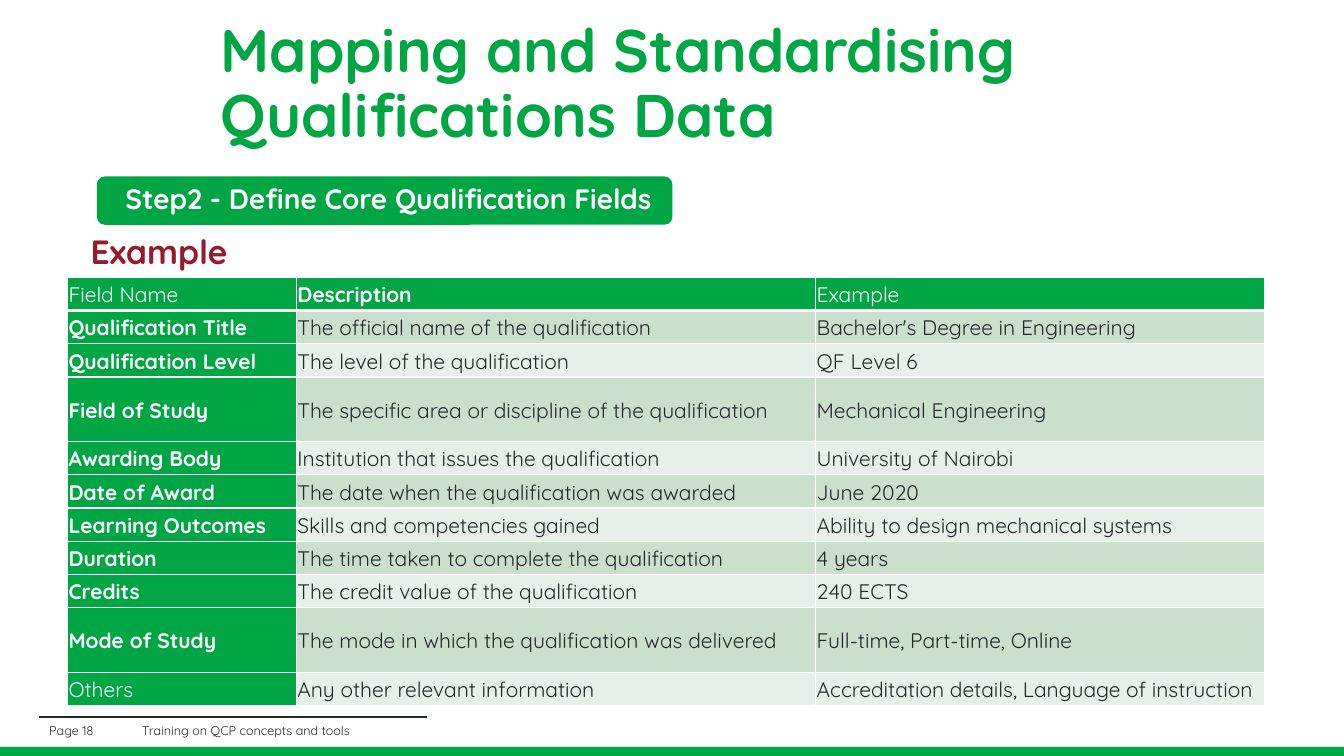
import dataclasses

import pptx
import pptx.dml.color
import pptx.enum.shapes
import pptx.enum.text
import pptx.oxml
import pptx.oxml.ns
import pptx.util
from pptx.util import Inches

ANCHOR = pptx.enum.text.MSO_ANCHOR


@dataclasses.dataclass(frozen=True)
class Theme:
    font: str = "Quicksand"
    green: str = "00A643"
    band_dark: str = "CAE0CD"
    band_light: str = "E6F0E8"
    ink: str = "24282A"
    crimson: str = "971B2F"
    white: str = "FFFFFF"
    title_size: float = 42.9
    example_size: float = 24
    step_size: float = 20
    table_size: float = 15
    footer_size: float = 9


THEME = Theme()

HEADERS = ("Field Name", "Description", "Example")
FIELDS = (
    ("Qualification Title", "The official name of the qualification", "Bachelor's Degree in Engineering"),
    ("Qualification Level", "The level of the qualification", "QF Level 6"),
    ("Field of Study", "The specific area or discipline of the qualification", "Mechanical Engineering"),
    ("Awarding Body", "Institution that issues the qualification", "University of Nairobi"),
    ("Date of Award", "The date when the qualification was awarded", "June 2020"),
    ("Learning Outcomes", "Skills and competencies gained", "Ability to design mechanical systems"),
    ("Duration", "The time taken to complete the qualification", "4 years"),
    ("Credits", "The credit value of the qualification", "240 ECTS"),
    ("Mode of Study", "The mode in which the qualification was delivered", "Full-time, Part-time, Online"),
    ("Others", "Any other relevant information", "Accreditation details, Language of instruction"),
)
TALL_FIELDS = {"Field of Study", "Mode of Study"}
BOLD_LABELS = {"Description"} | {field[0] for field in FIELDS} - {"Others"}
COLUMN_WIDTHS = (2.27, 5.15, 4.45)
ROW_HEIGHT, TALL_ROW_HEIGHT = 0.33, 0.64


def rgb(color):
    return pptx.dml.color.RGBColor.from_string(color)


def write(frame, text, size, color, bold=False, spacing=1.0, anchor=ANCHOR.MIDDLE):
    """Fill a text frame with one left-aligned paragraph."""
    frame.word_wrap = True
    frame.auto_size = pptx.enum.text.MSO_AUTO_SIZE.NONE
    frame.vertical_anchor = anchor
    style(frame, text, size, color, bold, spacing)


def style(frame, text, size, color, bold, spacing):
    frame.text = text
    paragraph = frame.paragraphs[0]
    paragraph.alignment = pptx.enum.text.PP_ALIGN.LEFT
    paragraph.line_spacing = spacing
    paragraph.font.name = THEME.font
    paragraph.font.size = pptx.util.Pt(size)
    paragraph.font.bold = bold
    paragraph.font.color.rgb = rgb(color)


def add_block(slide, kind, left, top, width, height):
    block = slide.shapes.add_shape(kind, Inches(left), Inches(top), Inches(width), Inches(height))
    block.shadow.inherit = False
    block.fill.solid()
    block.fill.fore_color.rgb = rgb(THEME.green)
    block.line.fill.background()
    return block


def add_label(slide, left, top, width, height, text, size, color, **options):
    label = slide.shapes.add_textbox(Inches(left), Inches(top), Inches(width), Inches(height))
    write(label.text_frame, text, size, color, **options)


def set_borders(cell, bottom):
    """Draw white cell borders; the bottom one may be heavier."""
    properties = cell._tc.get_or_add_tcPr()
    widths = {"lnL": 1, "lnR": 1, "lnT": 1, "lnB": bottom}
    for position, (side, points) in enumerate(widths.items()):
        border = pptx.oxml.parse_xml(
            f'<a:{side} {pptx.oxml.ns.nsdecls("a")} w="{pptx.util.Pt(points)}">'
            f'<a:solidFill><a:srgbClr val="{THEME.white}"/></a:solidFill></a:{side}>'
        )
        properties.insert(position, border)


def add_title(slide, left, top, width, height):
    title = slide.shapes.title
    title.left, title.top = Inches(left), Inches(top)
    title.width, title.height = Inches(width), Inches(height)
    write(title.text_frame, "Mapping and Standardising Qualifications Data",
          THEME.title_size, THEME.green, bold=True, spacing=0.9)


def add_step_heading(slide, left, top, width, height):
    # Step banner
    banner = add_block(slide, pptx.enum.shapes.MSO_SHAPE.ROUNDED_RECTANGLE, left, top, width, height)
    write(banner.text_frame, "Step2 - Define Core Qualification Fields",
          THEME.step_size, THEME.white, bold=True, spacing=0.9)
    banner.text_frame.margin_left = Inches(0.26)
    # Example heading below the banner
    add_label(slide, left - 0.16, top + height + 0.06, 12.19, 0.47, "Example", THEME.example_size,
              THEME.crimson, bold=True, spacing=0.9, anchor=ANCHOR.TOP)


def add_fields_table(slide, left, top):
    rows = (HEADERS,) + FIELDS
    heights = [TALL_ROW_HEIGHT if row[0] in TALL_FIELDS else ROW_HEIGHT for row in rows]
    table = slide.shapes.add_table(len(rows), len(HEADERS), Inches(left), Inches(top),
                                   Inches(sum(COLUMN_WIDTHS)), Inches(sum(heights))).table
    table.first_col = True
    for column, width in zip(table.columns, COLUMN_WIDTHS):
        column.width = Inches(width)
    for row_index, (row, height) in enumerate(zip(rows, heights)):
        table.rows[row_index].height = Inches(height)
        band = THEME.band_dark if row_index % 2 else THEME.band_light
        for column_index, text in enumerate(row):
            is_heading = row_index == 0 or column_index == 0
            cell = table.cell(row_index, column_index)
            cell.margin_left = cell.margin_right = Inches(0.01)
            cell.margin_top = cell.margin_bottom = Inches(0.01)
            cell.vertical_anchor = ANCHOR.MIDDLE
            cell.fill.solid()
            cell.fill.fore_color.rgb = rgb(THEME.green if is_heading else band)
            style(cell.text_frame, text, THEME.table_size, THEME.white if is_heading else THEME.ink,
                  is_heading and text in BOLD_LABELS, 1.07)
            set_borders(cell, bottom=3 if row_index == 0 else 1)


def add_footer(slide, left, top):
    # Green strip along the bottom edge
    add_block(slide, pptx.enum.shapes.MSO_SHAPE.RECTANGLE, -0.03, top + 0.3, 13.4, 0.13)
    # Rule above the footer text
    rule = slide.shapes.add_connector(pptx.enum.shapes.MSO_CONNECTOR.STRAIGHT, Inches(left), Inches(top),
                                      Inches(left + 3.85), Inches(top))
    rule.line.color.rgb = rgb(THEME.ink)
    rule.line.width = pptx.util.Pt(1.5)
    rule._element.spPr.append(pptx.oxml.parse_xml(f'<a:effectLst {pptx.oxml.ns.nsdecls("a")}/>'))
    # Page number and course name
    for offset, text in ((0, "Page 18"), (0.92, "Training on QCP concepts and tools")):
        add_label(slide, left + offset, top + 0.04, 4.06, 0.19, text, THEME.footer_size, THEME.ink)


def main():
    presentation = pptx.Presentation()
    presentation.slide_width, presentation.slide_height = Inches(13.33), Inches(7.5)
    slide = presentation.slides.add_slide(presentation.slide_layouts[5])
    add_footer(slide, 0.39, 7.11)
    add_fields_table(slide, 0.67, 2.75)
    add_title(slide, 2.09, 0.07, 11.24, 1.55)
    add_step_heading(slide, 0.96, 1.75, 5.71, 0.48)
    presentation.save("out.pptx")


if __name__ == "__main__":
    main()
